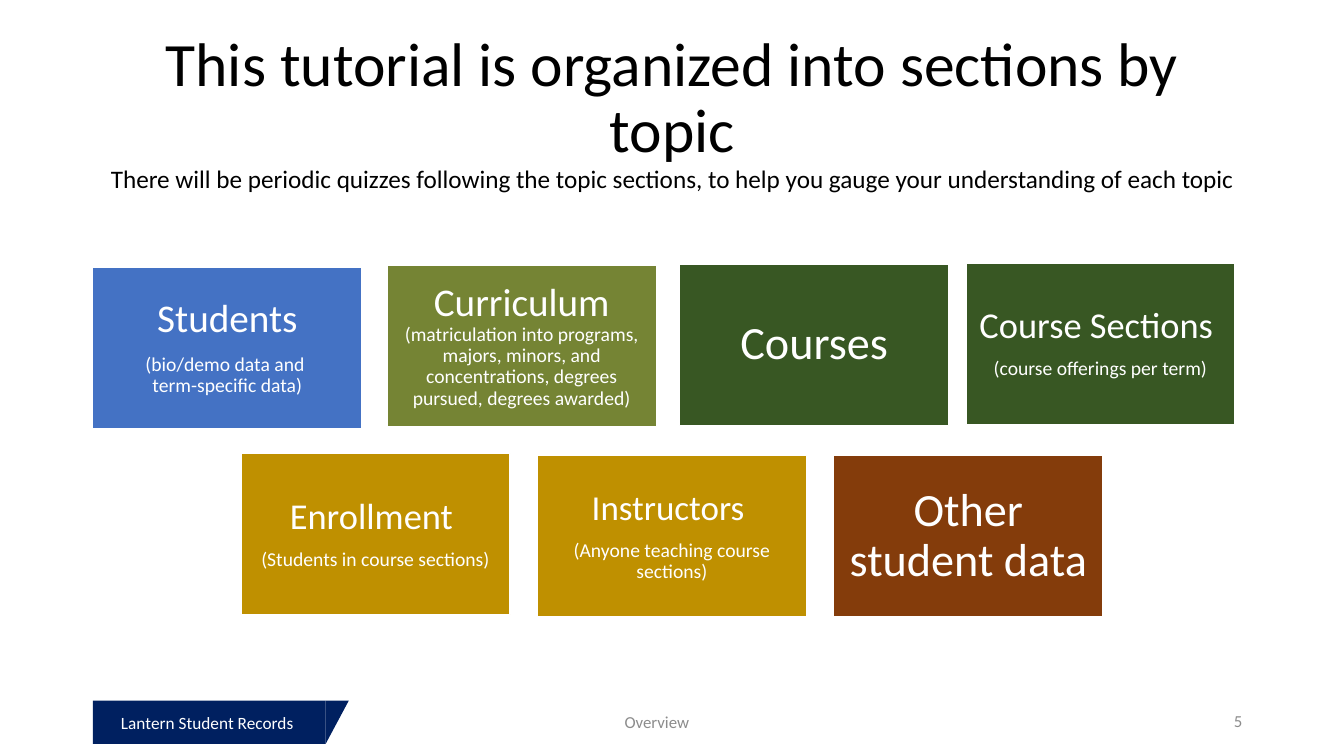
from pptx import Presentation
from pptx.dml.color import RGBColor
from pptx.enum.shapes import MSO_SHAPE
from pptx.enum.text import MSO_ANCHOR, MSO_AUTO_SIZE, PP_ALIGN
from pptx.util import Inches, Pt


def paint(form, color, edge=None):
    form.shadow.inherit = False
    form.fill.solid()
    form.fill.fore_color.rgb = RGBColor.from_string(color)
    if edge:
        form.line.color.rgb = RGBColor.from_string(edge)
        form.line.width = Pt(1)
    else:
        form.line.fill.background()


def style(frame, sizes, color, align=PP_ALIGN.CENTER):
    frame.word_wrap = True
    frame.auto_size = MSO_AUTO_SIZE.NONE
    frame.vertical_anchor = MSO_ANCHOR.MIDDLE
    runs = [run for para in frame.paragraphs for run in para.runs]
    for para in frame.paragraphs:
        para.alignment = align
    for index, run in enumerate(runs):
        run.font.name = "Calibri"
        run.font.size = Pt(sizes[min(index, len(sizes) - 1)])
        run.font.color.rgb = RGBColor.from_string(color)


deck = Presentation()
deck.slide_width = Inches(13.33)
deck.slide_height = Inches(7.5)
slide = deck.slides.add_slide(deck.slide_layouts[5])
shapes = slide.shapes

title = shapes.title
title.left, title.top = Inches(0.92), Inches(0.4)
title.width, title.height = Inches(11.5), Inches(1.45)
title.text_frame.text = "This tutorial is organized into sections by topic\v" \
    "There will be periodic quizzes following the topic sections, " \
    "to help you gauge your understanding of each topic"
style(title.text_frame, [44, 18], "000000")
title.text_frame.paragraphs[0].line_spacing = 0.9

cards = [
    (0.92, 2.65, "4472C4", 28, 0.12, "Students\n(bio/demo data and \vterm-specific data)"),
    (3.84, 2.63, "758434", 28, 0.12, "Curriculum "),
    (6.74, 2.62, "385723", 33, 0.14, "Courses"),
    (9.58, 2.61, "385723", 26, 0.11, "Course Sections \n(course offerings per term)"),
    (2.39, 4.5, "BF9000", 26, 0.11, "Enrollment \n(Students in course sections)"),
    (5.33, 4.52, "BF9000", 25, 0.1, "Instructors \n(Anyone teaching course sections)"),
    (8.27, 4.52, "843C0B", 33, 0.14, "Other student data "),
]
for left, top, color, size, inset, words in cards:
    card = shapes.add_shape(MSO_SHAPE.RECTANGLE, Inches(left), Inches(top),
                            Inches(2.67), Inches(1.6))
    paint(card, color, "FFFFFF")
    frame = card.text_frame
    frame.margin_left = frame.margin_right = Inches(inset)
    frame.margin_top = frame.margin_bottom = Inches(inset)
    frame.text = words
    if words == "Curriculum ":
        frame.paragraphs[0].add_run().text = "(matriculation into programs, majors, minors, and " \
            "concentrations, degrees pursued, degrees awarded)"
    style(frame, [size, 14], "FFFFFF")
    for para in frame.paragraphs:
        para.line_spacing = 0.9
        para.space_after = Pt(round(0.35 * para.runs[0].font.size.pt))

label = shapes.add_shape(MSO_SHAPE.RECTANGLE, Inches(0.92), Inches(6.95),
                         Inches(2.31), Inches(0.43))
paint(label, "002060")
label.text_frame.text = "Lantern Student Records "
style(label.text_frame, [12.3], "FFFFFF")

tip = shapes.add_shape(MSO_SHAPE.ISOSCELES_TRIANGLE, Inches(3.13), Inches(7.05),
                       Inches(0.43), Inches(0.23))
tip.adjustments[0] = 0
tip.rotation = 90
paint(tip, "002060")

notes = [
    (0.92, 11.19, 0.43, "Overview", PP_ALIGN.CENTER),
    (9.42, 3, 0.4, "5", PP_ALIGN.RIGHT),
]
for left, width, height, words, align in notes:
    box = shapes.add_textbox(Inches(left), Inches(6.95), Inches(width), Inches(height))
    box.text_frame.text = words
    style(box.text_frame, [12], "8C8C8C", align)

deck.save("out.pptx")
